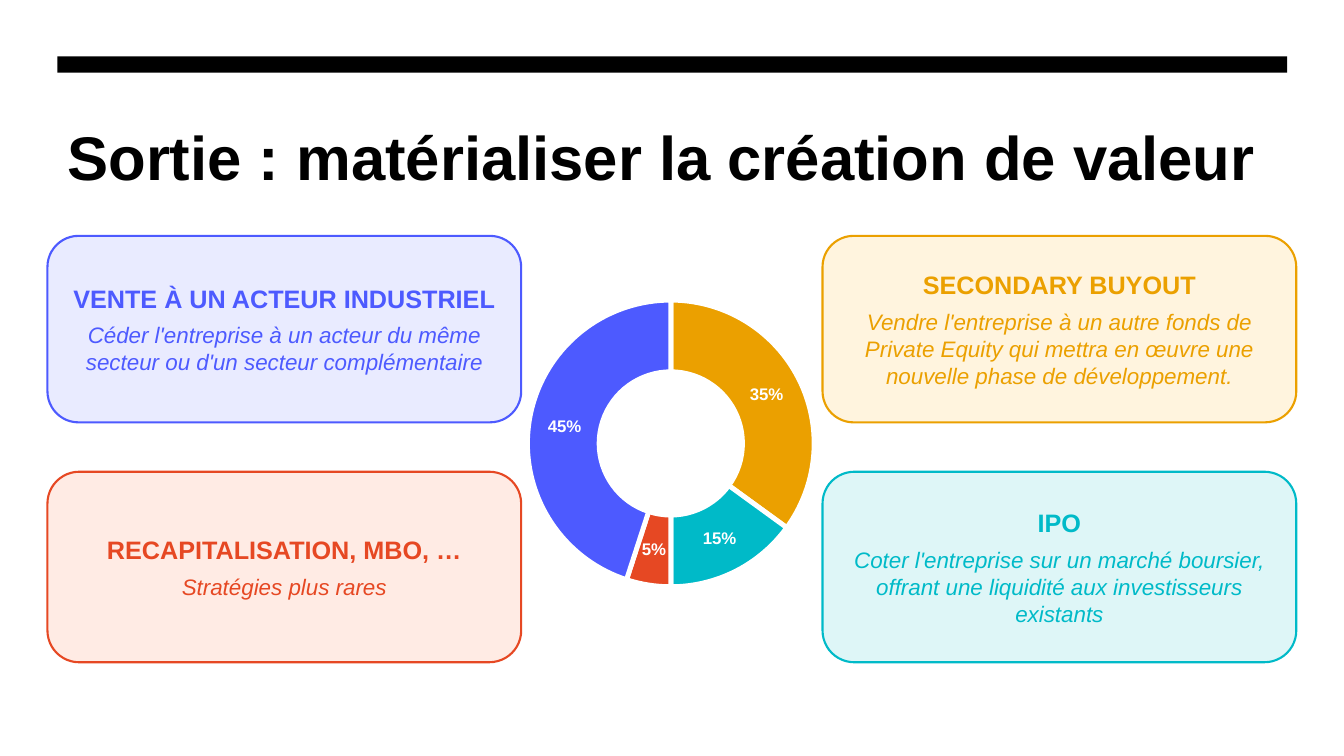
"""Build the slide on private equity exit routes and their shares."""
from dataclasses import dataclass

from lxml.etree import SubElement
from pptx import Presentation
from pptx.chart.data import CategoryChartData
from pptx.dml.color import RGBColor
from pptx.enum.chart import XL_CHART_TYPE
from pptx.enum.shapes import MSO_SHAPE
from pptx.enum.text import MSO_ANCHOR, PP_ALIGN
from pptx.oxml import parse_xml
from pptx.oxml.ns import nsdecls, qn
from pptx.util import Inches, Pt

W, H = Inches(13.33), Inches(7.5)


@dataclass(frozen=True)
class Theme:
    """Colours, font and type sizes."""
    font: str = "Arial"
    black: str = "000000"
    white: str = "FFFFFF"
    blue: str = "4D5AFF"
    red: str = "E64823"
    teal: str = "00BAC8"
    gold: str = "EBA000"
    pale_blue: str = "DBDEFF"
    pale_red: str = "FFDFD3"
    pale_gold: str = "FFEDC8"
    title: int = 44
    heading: int = 18
    body: int = 16
    label: int = 12
    chart: int = 10


@dataclass(frozen=True)
class Box:
    """A rectangle in percent of the slide's width and height."""
    x: float
    y: float
    w: float
    h: float

    def emu(self) -> tuple[int, int, int, int]:
        """Return left, top, width and height in EMU."""
        return (int(W * self.x / 100), int(H * self.y / 100),
                int(W * self.w / 100), int(H * self.h / 100))


@dataclass(frozen=True)
class Card:
    """An exit route with its place in the grid."""
    col: int
    row: int
    heading: str
    body: str
    color: str
    fill: str
    opacity: int = 60
    after: int = 6


T = Theme()
BAR = Box(4.28, 7.47, 91.5, 2.13)
TITLE = Box(4.28, 14.27, 91.5, 21.33)
RING = Box(29.7, 37.6, 40.43, 42.13)
COLS = (3.53, 61.2)
ROWS = ((31.2, 24.67), (62.4, 25.2))
CARD_W = 35.25
SHARES = ((0.35, T.gold), (0.15, T.teal), (0.05, T.red), (0.45, T.blue))
CARDS = (
    Card(0, 0, "VENTE À UN ACTEUR INDUSTRIEL",
         "Céder l'entreprise à un acteur du même secteur ou d'un secteur complémentaire",
         T.blue, T.pale_blue, after=0),
    Card(0, 1, "RECAPITALISATION, MBO, …", "Stratégies plus rares", T.red, T.pale_red),
    Card(1, 1, "IPO",
         "Coter l'entreprise sur un marché boursier, offrant une liquidité "
         "aux investisseurs existants", T.teal, T.teal, opacity=13),
    Card(1, 0, "SECONDARY BUYOUT",
         "Vendre l'entreprise à un autre fonds de Private Equity qui mettra en œuvre "
         "une nouvelle phase de développement.", T.gold, T.pale_gold),
)


def rgb(color: str) -> RGBColor:
    """Turn a hex string into a colour."""
    return RGBColor.from_string(color)


def set_font(font, size: int, color: str, bold: bool = False, italic: bool = False) -> None:
    """Style a font in the theme's typeface."""
    font.name, font.size, font.bold, font.italic = T.font, Pt(size), bold, italic
    font.color.rgb = rgb(color)


def add_run(p, text: str, size: int, color: str, bold: bool = False,
            italic: bool = False) -> None:
    """Append a styled run to a paragraph."""
    r = p.add_run()
    r.text = text
    set_font(r.font, size, color, bold, italic)


def add_filled(s, kind: MSO_SHAPE, box: Box, color: str):
    """Add a flat shape without an outline."""
    sp = s.shapes.add_shape(kind, *box.emu())
    sp.shadow.inherit = False
    sp.fill.solid()
    sp.fill.fore_color.rgb = rgb(color)
    sp.line.fill.background()
    return sp


def add_title(s, text: str) -> None:
    """Add the slide's title."""
    tf = s.shapes.add_textbox(*TITLE.emu()).text_frame
    tf.word_wrap = True
    tf.margin_top = Inches(0.11)
    add_run(tf.paragraphs[0], text, T.title, T.black, bold=True)


def add_card(s, card: Card) -> None:
    """Add a rounded card with a heading and a description."""
    y, h = ROWS[card.row]
    sp = add_filled(s, MSO_SHAPE.ROUNDED_RECTANGLE,
                    Box(COLS[card.col], y, CARD_W, h), card.fill)
    clr = sp.fill._xPr.find(qn("a:solidFill"))[0]
    SubElement(clr, qn("a:alpha"), val=str(card.opacity * 1000))
    sp.line.color.rgb = rgb(card.color)
    sp.line.width = Pt(1.5)
    tf = sp.text_frame
    tf.word_wrap = True
    tf.vertical_anchor = MSO_ANCHOR.MIDDLE
    head, body = tf.paragraphs[0], tf.add_paragraph()
    for p, after in ((head, 6), (body, card.after)):
        p.alignment = PP_ALIGN.CENTER
        p.space_after = Pt(after)
    add_run(head, card.heading, T.heading, card.color, bold=True)
    add_run(body, card.body, T.body, card.color, italic=True)


def add_ring(s) -> None:
    """Add the doughnut chart of exit shares."""
    data = CategoryChartData(number_format="0%")
    data.categories = [str(i) for i in range(1, len(SHARES) + 1)]
    data.add_series("Series 1", [share for share, _ in SHARES])
    chart = s.shapes.add_chart(XL_CHART_TYPE.DOUGHNUT, *RING.emu(), data).chart
    chart.has_legend = chart.has_title = False
    set_font(chart.font, T.chart, T.black)
    plot = chart.plots[0]
    plot.vary_by_categories = False
    plot._element.find(qn("c:holeSize")).set("val", "60")
    area = chart._chartSpace.chart.plotArea
    for old in area.findall(qn("c:layout")):
        area.remove(old)
    area.insert(0, parse_xml(
        f'<c:layout {nsdecls("c")}><c:manualLayout><c:layoutTarget val="inner"/>'
        '<c:xMode val="edge"/><c:yMode val="edge"/><c:x val="0.23"/><c:y val="0.05"/>'
        '<c:w val="0.54"/><c:h val="0.9"/></c:manualLayout></c:layout>'))
    ser = plot.series[0]
    for i, (_, color) in enumerate(SHARES):
        fmt = ser.points[i].format
        fmt.fill.solid()
        fmt.fill.fore_color.rgb = rgb(color)
        fmt.line.color.rgb = rgb(T.white)
        fmt.line.width = Pt(3.5)
    labels = ser.data_labels
    labels.show_value = True
    labels.show_percentage = False
    labels.number_format, labels.number_format_is_linked = "0%", False
    set_font(labels.font, T.label, T.white, bold=True)


def main() -> None:
    """Build and save the slide."""
    prs = Presentation()
    prs.slide_width, prs.slide_height = W, H
    s = prs.slides.add_slide(prs.slide_layouts[6])
    add_filled(s, MSO_SHAPE.RECTANGLE, BAR, T.black)
    add_title(s, "Sortie : matérialiser la création de valeur")
    add_ring(s)
    for card in CARDS:
        add_card(s, card)
    prs.save("out.pptx")


if __name__ == "__main__":
    main()
